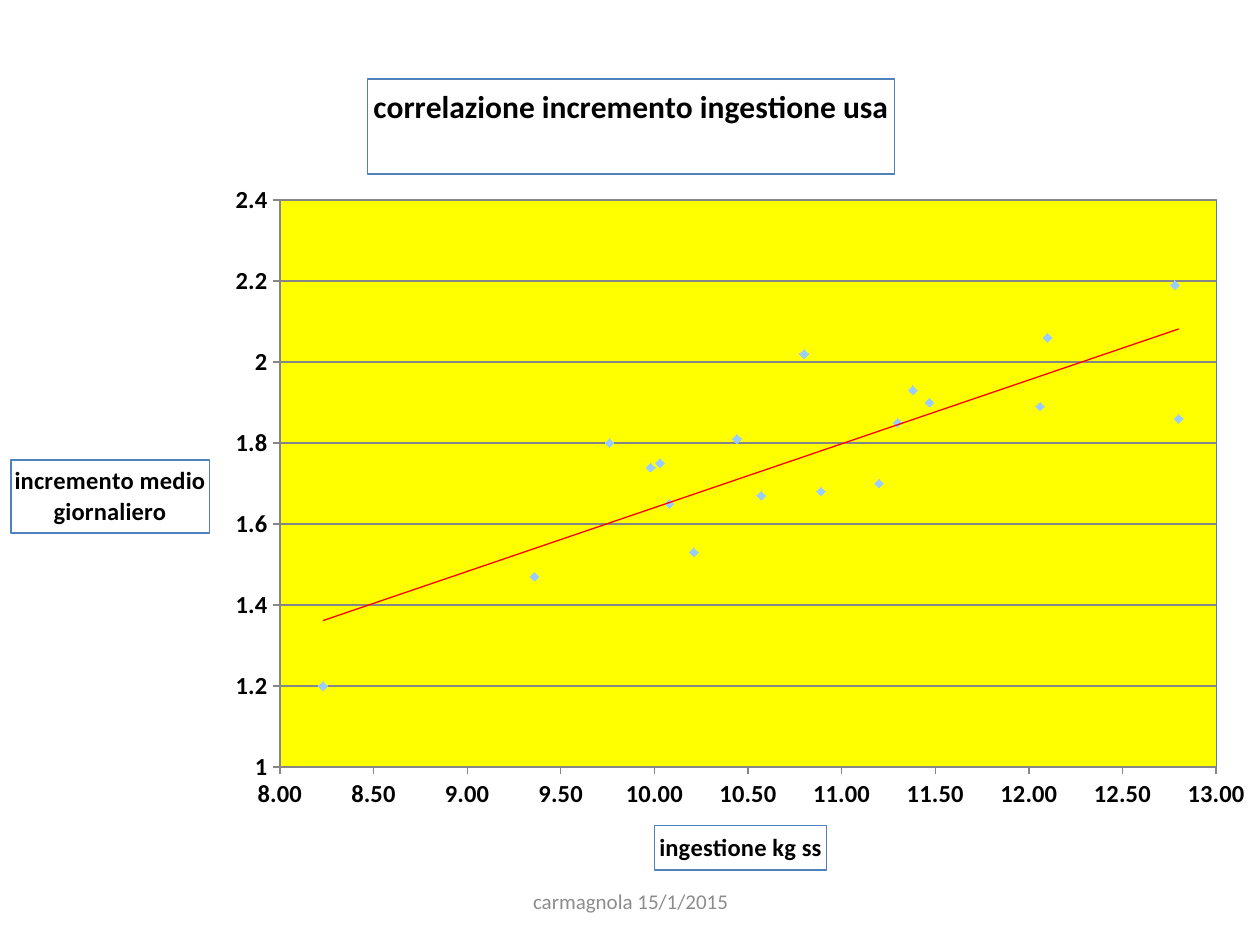
from dataclasses import dataclass

from pptx import Presentation
from pptx.chart.data import XyChartData
from pptx.dml.color import RGBColor
from pptx.enum.chart import XL_CHART_TYPE as ChartType
from pptx.enum.chart import XL_MARKER_STYLE as MarkerStyle
from pptx.enum.chart import XL_TICK_MARK as TickMark
from pptx.enum.text import MSO_ANCHOR as Anchor
from pptx.enum.text import PP_ALIGN as Align
from pptx.oxml import parse_xml
from pptx.oxml.ns import nsdecls, qn
from pptx.util import Cm, Pt

POINTS = [
    (8.23, 1.2), (9.36, 1.47), (9.76, 1.8), (9.98, 1.74), (10.03, 1.75),
    (10.08, 1.65), (10.21, 1.53), (10.44, 1.81), (10.57, 1.67), (10.8, 2.02),
    (10.89, 1.68), (10.89, 1.68), (11.2, 1.7), (11.3, 1.85), (11.38, 1.93),
    (11.47, 1.9), (12.06, 1.89), (12.1, 2.06), (12.78, 2.19), (12.8, 1.86),
]


def color(value):
    return RGBColor.from_string(value)


def apply(target, values):
    for name, value in values.items():
        setattr(target, name, value)


def paint_line(line, value):
    line.color.rgb = color(value)
    line.width = Pt(0.75)


def layout_xml(x, y, width=None, height=None):
    inner = '<c:layoutTarget val="inner"/>' if width else ""
    modes = '<c:xMode val="edge"/><c:yMode val="edge"/>'
    sizes = f'<c:w val="{width}"/><c:h val="{height}"/>' if width else ""
    return parse_xml(
        f'<c:layout {nsdecls("c")}><c:manualLayout>{inner}{modes}'
        f'<c:x val="{x}"/><c:y val="{y}"/>{sizes}</c:manualLayout></c:layout>'
    )


def replace_layout(element, layout, position):
    for old in element.findall(qn("c:layout")):
        element.remove(old)
    element.insert(position, layout)


@dataclass
class ScatterSlide:
    slide: object
    font: str = "Calibri"
    ink: str = "000000"
    border: str = "4F81BD"
    grid: str = "868686"
    plot: str = "FFFF00"
    marker: str = "99CCFF"
    trend: str = "FF0000"
    muted: str = "8C8C8C"

    def style_font(self, font, size, bold=True, ink=None):
        apply(font, {"name": self.font, "size": Pt(size), "bold": bold})
        font.color.rgb = color(ink or self.ink)

    def title(self, title, text, size, x, y):
        frame = title.text_frame
        frame.text = text
        for paragraph in frame.paragraphs:
            paragraph.alignment = Align.CENTER
            self.style_font(paragraph.font, size)
            for run in paragraph.runs:
                self.style_font(run.font, size)
        for body in title.element.iter(qn("a:bodyPr")):
            body.set("rot", "0")
            body.set("vert", "horz")
        paint_line(title.format.line, self.border)
        replace_layout(title.element, layout_xml(x, y), 1)

    def axis(self, axis, values, number_format):
        apply(axis, values)
        apply(axis, {"major_tick_mark": TickMark.OUTSIDE, "minor_tick_mark": TickMark.NONE})
        apply(axis.tick_labels, {"number_format": number_format, "number_format_is_linked": False})
        self.style_font(axis.tick_labels.font, 14)
        paint_line(axis.format.line, self.grid)

    def series(self, series):
        series.format.line.fill.background()
        apply(series.marker, {"style": MarkerStyle.DIAMOND, "size": 5})
        series.marker.format.fill.solid()
        series.marker.format.fill.fore_color.rgb = color(self.marker)
        paint_line(series.marker.format.line, self.marker)
        series._element.find(qn("c:xVal")).addprevious(parse_xml(
            f'<c:trendline {nsdecls("c", "a")}><c:spPr><a:ln w="{Pt(0.75)}"><a:solidFill>'
            f'<a:srgbClr val="{self.trend}"/></a:solidFill></a:ln></c:spPr>'
            '<c:trendlineType val="linear"/><c:dispRSqr val="0"/><c:dispEq val="0"/></c:trendline>'
        ))

    def plot_area(self, chart):
        area = chart.element.find(".//" + qn("c:plotArea"))
        replace_layout(area, layout_xml(0.2274, 0.1733, 0.7307, 0.68), 0)
        area.append(parse_xml(
            f'<c:spPr {nsdecls("c", "a")}><a:solidFill><a:srgbClr val="{self.plot}"/></a:solidFill>'
            f'<a:ln w="{Pt(0.75)}"><a:solidFill><a:srgbClr val="{self.border}"/></a:solidFill></a:ln></c:spPr>'
        ))

    def chart(self, left, top, width, height):
        data = XyChartData()
        points = data.add_series("Series 1")
        for ingestion, gain in POINTS:
            points.add_data_point(ingestion, gain)
        chart = self.slide.shapes.add_chart(
            ChartType.XY_SCATTER, Cm(left), Cm(top), Cm(width), Cm(height), data
        ).chart
        self.style_font(chart.font, 10, False)
        chart.has_legend = False
        chart.plots[0].vary_by_categories = False
        chart.plots[0].series[0].smooth = False
        self.series(chart.plots[0].series[0])
        horizontal, vertical = chart.category_axis, chart.value_axis
        self.axis(horizontal, {"minimum_scale": 8, "maximum_scale": 13, "major_unit": 0.5,
                               "has_major_gridlines": False}, "0.00")
        self.axis(vertical, {"minimum_scale": 1, "maximum_scale": 2.4, "major_unit": 0.2,
                             "has_major_gridlines": True}, "General")
        paint_line(vertical.major_gridlines.format.line, self.grid)
        self.title(chart.chart_title, "correlazione incremento ingestione usa\n", 18, 0.296, 0.028)
        self.title(horizontal.axis_title, "ingestione kg ss", 14, 0.52, 0.923)
        self.title(vertical.axis_title, "incremento medio\ngiornaliero", 14, 0.0174, 0.485)
        self.plot_area(chart)

    def text(self, text, left, top, width, height):
        frame = self.slide.shapes.add_textbox(Cm(left), Cm(top), Cm(width), Cm(height)).text_frame
        apply(frame, {"word_wrap": True, "vertical_anchor": Anchor.MIDDLE})
        paragraph = frame.paragraphs[0]
        paragraph.alignment = Align.CENTER
        run = paragraph.add_run()
        run.text = text
        self.style_font(run.font, 12, False, self.muted)


def main():
    presentation = Presentation()
    apply(presentation, {"slide_width": Cm(25.4), "slide_height": Cm(19.05)})
    page = ScatterSlide(presentation.slides.add_slide(presentation.slide_layouts[6]))
    page.chart(-0.23, 1.12, 25.83, 16.81)
    page.text("carmagnola 15/1/2015", 8.69, 17.65, 8.05, 1.02)
    presentation.save("out.pptx")


if __name__ == "__main__":
    main()
